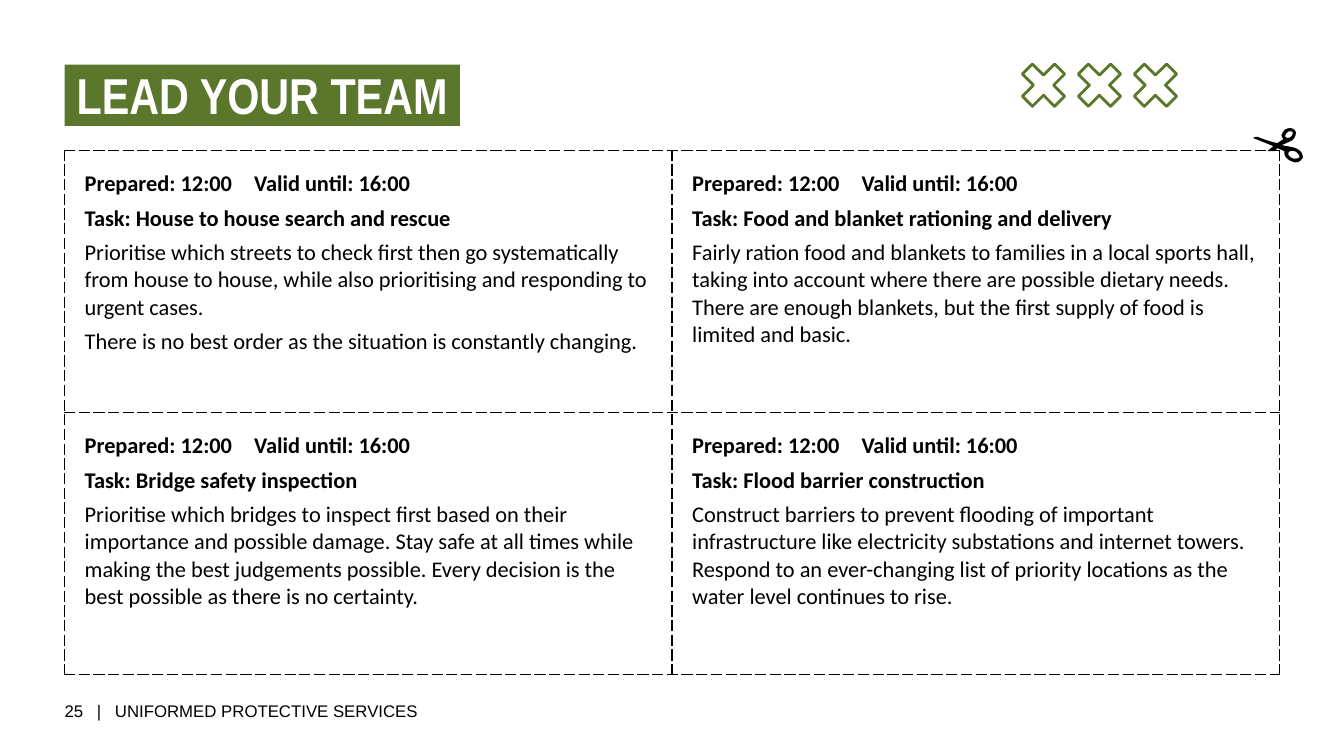
from dataclasses import dataclass

import pptx
import pptx.dml.color
import pptx.enum.text
import pptx.oxml
import pptx.oxml.ns
import pptx.util

Inches, Pt = pptx.util.Inches, pptx.util.Pt
RGBColor = pptx.dml.color.RGBColor
MSO_ANCHOR, MSO_AUTO_SIZE = pptx.enum.text.MSO_ANCHOR, pptx.enum.text.MSO_AUTO_SIZE
PP_ALIGN = pptx.enum.text.PP_ALIGN

GREEN = RGBColor(0x5B, 0x77, 0x2B)
BLACK = RGBColor(0, 0, 0)
WHITE = RGBColor(255, 255, 255)
UNITS = 1000  # freeform units per inch
Point = tuple[float, float]
Contour = list[Point]


@dataclass
class TaskCard:
    task: str
    details: list[str]


TIMES = "Prepared: 12:00\tValid until: 16:00"
CARDS = [
    [TaskCard("House to house search and rescue", [
        "Prioritise which streets to check first then go systematically from house to "
        "house, while also prioritising and responding to urgent cases.",
        "There is no best order as the situation is constantly changing."]),
     TaskCard("Food and blanket rationing and delivery", [
         "Fairly ration food and blankets to families in a local sports hall, taking into "
         "account where there are possible dietary needs. There are enough blankets, but "
         "the first supply of food is limited and basic."])],
    [TaskCard("Bridge safety inspection", [
        "Prioritise which bridges to inspect first based on their importance and possible "
        "damage. Stay safe at all times while making the best judgements possible. Every "
        "decision is the best possible as there is no certainty."]),
     TaskCard("Flood barrier construction", [
         "Construct barriers to prevent flooding of important infrastructure like "
         "electricity substations and internet towers. Respond to an ever-changing list of "
         "priority locations as the water level continues to rise."])],
]

# Each scissors outline: a start point, then lines (1 point) or Bézier curves (3 points)
SCISSORS = [
    [[(12.82, 1.57)],
     [(12.85, 1.58), (12.88, 1.57), (12.89, 1.56)],
     [(12.89, 1.54), (12.87, 1.51), (12.84, 1.5)],
     [(12.82, 1.49), (12.79, 1.5), (12.78, 1.51)],
     [(12.78, 1.52)],
     [(12.77, 1.53), (12.79, 1.56), (12.82, 1.57)]],
    [[(12.8, 1.36)],
     [(12.81, 1.35), (12.82, 1.34), (12.82, 1.33)],
     [(12.82, 1.31)],
     [(12.81, 1.3), (12.78, 1.3), (12.77, 1.31)],
     [(12.76, 1.32), (12.75, 1.33), (12.75, 1.34)],
     [(12.75, 1.36)],
     [(12.76, 1.37), (12.79, 1.37), (12.8, 1.36)]],
    [[(12.57, 1.5)], [(12.63, 1.45)], [(12.43, 1.37)],
     [(12.43, 1.37), (12.45, 1.35), (12.48, 1.36)],
     [(12.5, 1.37), (12.61, 1.41), (12.67, 1.42)],
     [(12.73, 1.38)],
     [(12.72, 1.37), (12.71, 1.35), (12.71, 1.34)],
     [(12.72, 1.32), (12.73, 1.3), (12.74, 1.29)],
     [(12.78, 1.26), (12.82, 1.27), (12.84, 1.29)],
     [(12.85, 1.3), (12.86, 1.32), (12.85, 1.33)],
     [(12.85, 1.35), (12.84, 1.37), (12.82, 1.39)],
     [(12.81, 1.4), (12.71, 1.44), (12.71, 1.44)],
     [(12.71, 1.44), (12.83, 1.46), (12.85, 1.47)],
     [(12.9, 1.49), (12.93, 1.53), (12.92, 1.57)],
     [(12.91, 1.58)],
     [(12.89, 1.61), (12.85, 1.62), (12.81, 1.6)],
     [(12.76, 1.58), (12.73, 1.54), (12.74, 1.5)],
     [(12.67, 1.47)],
     [(12.66, 1.48), (12.65, 1.49), (12.64, 1.5)]],
]


def flatten(segments: list[Contour], steps: int = 8) -> Contour:
    """Turn lines and curves into a chain of points."""
    points: Contour = []
    for seg in segments:
        if len(seg) == 1:
            points.append(seg[0])
            continue
        ctrl = [points[-1], *seg]
        for i in range(1, steps + 1):
            t = i / steps
            weights = ((1 - t) ** 3, 3 * t * (1 - t) ** 2, 3 * t * t * (1 - t), t ** 3)
            points.append((sum(w * c[0] for w, c in zip(weights, ctrl)),
                           sum(w * c[1] for w, c in zip(weights, ctrl))))
    return points


def draw_outline(s, contours: list[Contour]):
    scaled = [[(x * UNITS, y * UNITS) for x, y in contour] for contour in contours]
    builder = s.shapes.build_freeform(*scaled[0][0], scale=Inches(1) / UNITS)
    for i, contour in enumerate(scaled):
        if i:
            builder.move_to(*contour[0])
        builder.add_line_segments(contour[1:], close=True)
    sp = builder.convert_to_shape()
    sp.shadow.inherit = False
    return sp


def set_all(target, formats: dict) -> None:
    for name, value in formats.items():
        setattr(target, name, value)


def format_font(font, color: RGBColor, **formats) -> None:
    set_all(font, formats)
    font.color.rgb = color


def place(sp, left: float, top: float, width: float, height: float) -> None:
    set_all(sp, {"left": Inches(left), "top": Inches(top),
                 "width": Inches(width), "height": Inches(height)})


def add_tabs(p, *stops: float) -> None:
    tabs = "".join(f'<a:tab pos="{Inches(stop)}" algn="l"/>' for stop in stops)
    p._p.get_or_add_pPr().append(pptx.oxml.parse_xml(
        f'<a:tabLst {pptx.oxml.ns.nsdecls("a")}>{tabs}</a:tabLst>'))


def dash_borders(cell) -> None:
    tcPr = cell._tc.get_or_add_tcPr()
    for i, side in enumerate(("lnL", "lnR", "lnT", "lnB")):
        tcPr.insert(i, pptx.oxml.parse_xml(
            f'<a:{side} {pptx.oxml.ns.nsdecls("a")} w="{Pt(1)}"><a:solidFill>'
            f'<a:srgbClr val="{BLACK}"/></a:solidFill><a:prstDash val="dash"/></a:{side}>'))


def fill_card(cell, card: TaskCard) -> None:
    cell.fill.solid()
    cell.fill.fore_color.rgb = WHITE
    dash_borders(cell)
    set_all(cell, {f"margin_{side}": Inches(0.2)
                   for side in ("left", "top", "right", "bottom")})
    tf = cell.text_frame
    tf.text = "\n".join([TIMES, f"Task: {card.task}", *card.details])
    add_tabs(tf.paragraphs[0], 1.68)
    for i, p in enumerate(tf.paragraphs):
        p.space_after = Pt(5)
        for r in p.runs:
            format_font(r.font, BLACK, name="Calibri", size=Pt(16), bold=i < 2)


def main() -> None:
    prs = pptx.Presentation()
    prs.slide_width, prs.slide_height = Inches(13.33), Inches(7.5)
    s = prs.slides.add_slide(prs.slide_layouts[5])

    # Title
    title = s.shapes.title
    place(title, 0.64, 0.64, 3.92, 0.61)
    title.fill.solid()
    title.fill.fore_color.rgb = GREEN
    tf = title.text_frame
    tf.text = "LEAD YOUR TEAM"
    set_all(tf, {"margin_left": Inches(0.12), "margin_right": Inches(0.08),
                 "margin_top": 0, "margin_bottom": 0, "word_wrap": False,
                 "vertical_anchor": MSO_ANCHOR.TOP, "auto_size": MSO_AUTO_SIZE.NONE})
    p = tf.paragraphs[0]
    p.alignment = PP_ALIGN.LEFT
    format_font(p.runs[0].font, WHITE, name="Arial Narrow", size=Pt(36), bold=True)

    # Three crosses
    corner = [(0.1, 0), (0.21, 0.11), (0.11, 0.21), (0, 0.1), (-0.11, 0.21), (-0.21, 0.11)]
    cross = corner + [(-x, -y) for x, y in corner]
    crosses = draw_outline(s, [[(10.35 + 0.555 * i + x, 0.845 + y) for x, y in cross]
                               for i in range(3)])
    crosses.fill.background()
    crosses.line.color.rgb = GREEN
    crosses.line.width = Pt(2)

    # Task cards
    table = s.shapes.add_table(2, 2, Inches(0.64), Inches(1.49),
                               Inches(12.05), Inches(5.2)).table
    table.first_row = table.horz_banding = False
    for r, row in enumerate(CARDS):
        for c, card in enumerate(row):
            fill_card(table.cell(r, c), card)

    # Scissors
    scissors = draw_outline(s, [flatten(outline) for outline in SCISSORS])
    scissors.fill.solid()
    scissors.fill.fore_color.rgb = BLACK
    scissors.line.fill.background()

    # Footer
    tf = s.shapes.add_textbox(Inches(0.64), Inches(6.95), Inches(3.82), Inches(0.2)).text_frame
    set_all(tf, {"margin_left": 0, "margin_right": 0, "margin_top": 0, "margin_bottom": 0,
                 "word_wrap": True, "vertical_anchor": MSO_ANCHOR.MIDDLE,
                 "auto_size": MSO_AUTO_SIZE.SHAPE_TO_FIT_TEXT})
    p = tf.paragraphs[0]
    add_tabs(p, 0.32, 0.5)
    r = p.add_run()
    r.text = "25\t|\tUNIFORMED PROTECTIVE SERVICES"
    format_font(r.font, BLACK, name="Arial", size=Pt(12))

    prs.save("out.pptx")


if __name__ == "__main__":
    main()
